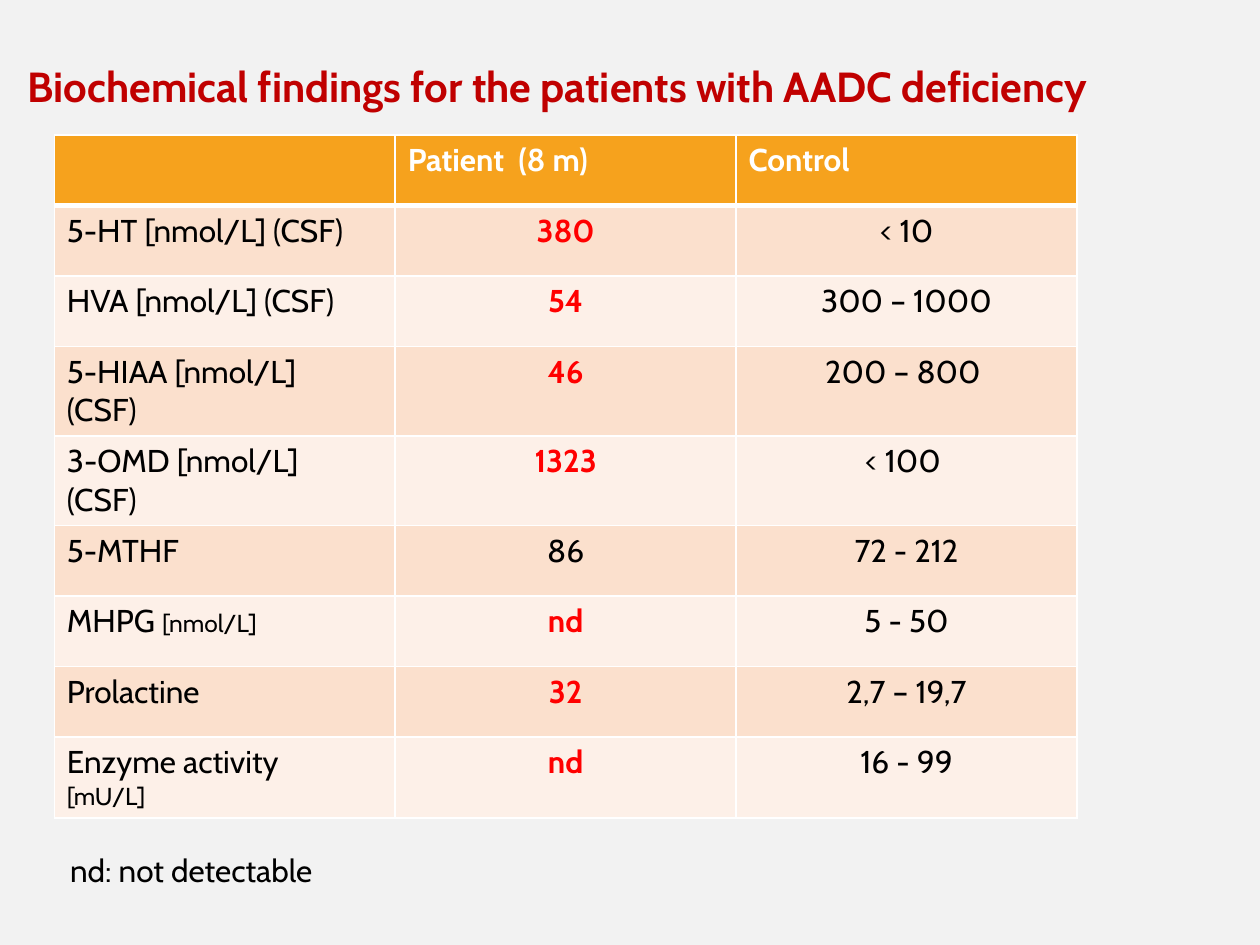
from lxml import etree
from pptx import Presentation
from pptx.dml.color import RGBColor
from pptx.enum import text
from pptx.oxml import ns
from pptx.util import Pt

FONT = "Cabin"
WHITE, BLACK, RED, TITLE_RED = "FFFFFF", "000000", "FF0000", "C00000"
ORANGE, BANDS, BACKGROUND = "F6A21D", ("FBE0CD", "FDF0E8"), "F2F2F2"
HEADERS = ("", "Patient  (8 m)", "Control")
NORMAL = {"86"}
FINDINGS = [
    ([[("5-HT [nmol/L] (CSF)", 18)]], "380", "< 10"),
    ([[("HVA [nmol/L] (CSF)", 18)]], "54", "300 – 1000"),
    ([[("5-HIAA [nmol/L]", 18)], [("(CSF)", 18)]], "46", "200 – 800 "),
    ([[("3-OMD [nmol/L]", 18)], [("(CSF)", 18)]], "1323", "< 100 "),
    ([[("5-MTHF", 18)]], "86", "72 - 212"),
    ([[("MHPG ", 18), ("[nmol/L]", 14)]], "nd", "5 - 50"),
    ([[("Prolactine", 18)]], "32", "2,7 – 19,7"),
    ([[("Enzyme activity", 18)], [("[mU/L]", 14)]], "nd", "16 - 99"),
]


def color(value):
    """Turn a hex string into a colour."""
    return RGBColor.from_string(value)


def paint(fill, value):
    """Give a fill one solid colour."""
    fill.solid()
    fill.fore_color.rgb = color(value)


def write(frame, lines, ink=BLACK, bold=False, align=text.PP_ALIGN.LEFT):
    """Write lines of (wording, size) spans into a text frame."""
    for number, line in enumerate(lines):
        para = frame.paragraphs[0] if number == 0 else frame.add_paragraph()
        para.alignment = align
        for wording, size in line:
            span = para.add_run()
            span.text = wording
            for name, value in {"name": FONT, "size": Pt(size), "bold": bold}.items():
                setattr(span.font, name, value)
            span.font.color.rgb = color(ink)


def add_borders(cell, widths):
    """Draw white cell borders of the given left, right, top and bottom widths."""
    properties = cell._tc.get_or_add_tcPr()
    for position, (side, width) in enumerate(zip("LRTB", widths)):
        line = etree.Element(ns.qn(f"a:ln{side}"), w=str(Pt(width)))
        fill = etree.SubElement(line, ns.qn("a:solidFill"))
        etree.SubElement(fill, ns.qn("a:srgbClr"), val=WHITE)
        properties.insert(position, line)


def add_title(page, box, wording):
    """Place and format the slide title."""
    title = page.shapes.title
    title.left, title.top, title.width, title.height = map(Pt, box)
    title.text_frame.auto_size = text.MSO_AUTO_SIZE.NONE
    write(title.text_frame, [[(wording, 24)]], TITLE_RED, True)


def add_findings(page, box):
    """Build the table of findings inside the box."""
    rows, columns = len(FINDINGS) + 1, len(HEADERS)
    table = page.shapes.add_table(rows, columns, *map(Pt, box)).table
    for column in table.columns:
        column.width = Pt(box[2] / columns)
    for row in table.rows:
        row.height = Pt(box[3] / rows)

    for cell, wording in zip(table.rows[0].cells, HEADERS):
        paint(cell.fill, ORANGE)
        add_borders(cell, (1, 1, 1, 3))
        if wording:
            write(cell.text_frame, [[(wording, 18)]], WHITE, True)

    center = text.PP_ALIGN.CENTER
    for number, (label, patient, control) in enumerate(FINDINGS):
        cells = list(table.rows[number + 1].cells)
        for cell in cells:
            paint(cell.fill, BANDS[number % 2])
            add_borders(cell, (1, 1, 1 if number else 3, 1))
        unusual = patient not in NORMAL
        write(cells[0].text_frame, label)
        write(cells[1].text_frame, [[(patient, 18)]], RED if unusual else BLACK, unusual, center)
        write(cells[2].text_frame, [[(control, 18)]], align=center)


def add_note(page, box, wording):
    """Add the note under the table."""
    frame = page.shapes.add_textbox(*map(Pt, box)).text_frame
    frame.word_wrap = True
    write(frame, [[(wording, 18)]])


def main():
    """Build and save the deck."""
    deck = Presentation()
    deck.slide_width, deck.slide_height = Pt(720), Pt(540)
    page = deck.slides.add_slide(deck.slide_layouts[5])
    paint(page.background.fill, BACKGROUND)
    add_title(page, (8.7, 31, 692, 36.3), "Biochemical findings for the patients with AADC deficiency")
    add_findings(page, (31, 77.2, 584.4, 362.7))
    add_note(page, (33, 483, 215, 29), "nd: not detectable")
    deck.save("out.pptx")


if __name__ == "__main__":
    main()
